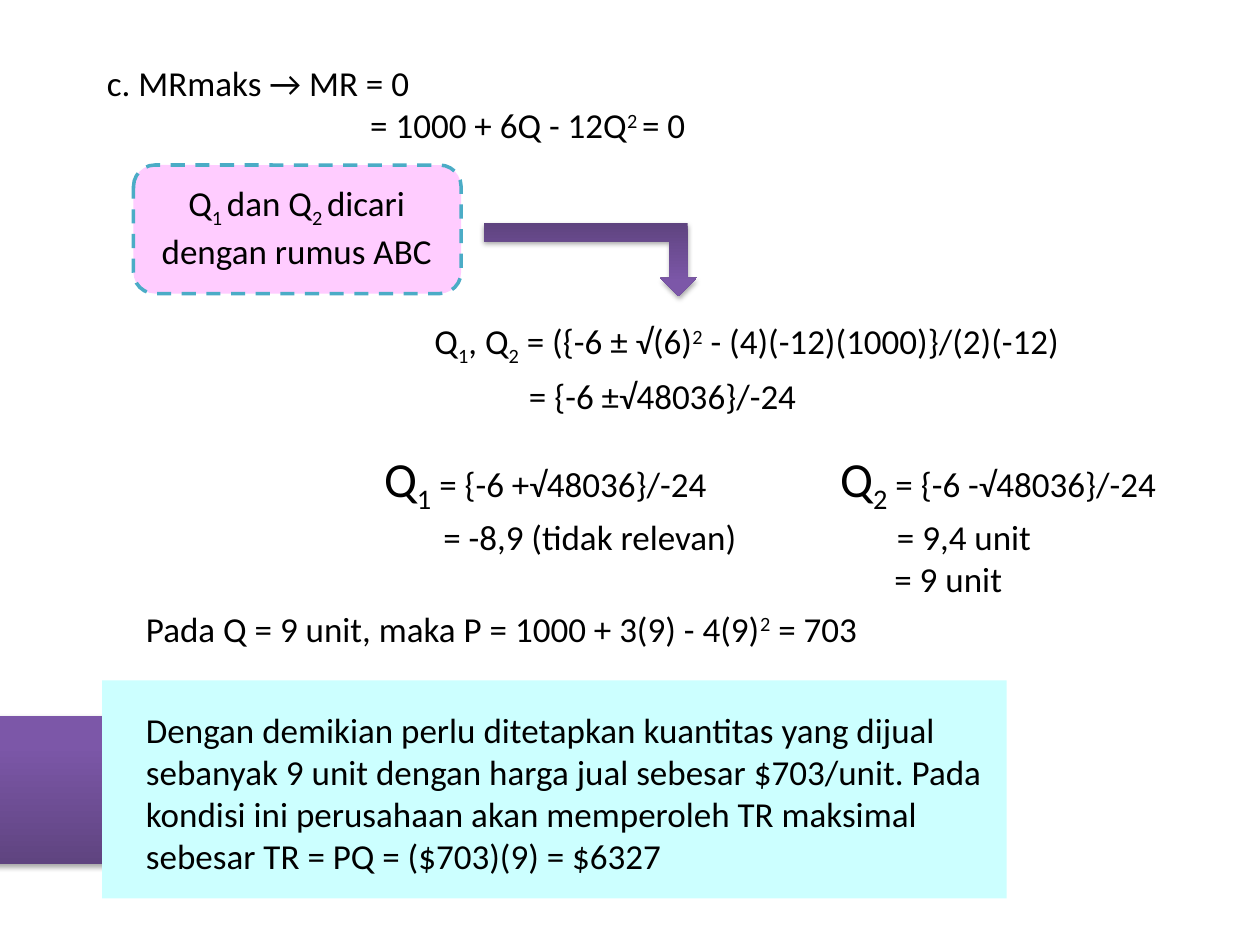
from dataclasses import dataclass

from lxml import etree
from pptx import Presentation
from pptx import util as u
from pptx.dml.color import RGBColor
from pptx.enum import dml, shapes, text
from pptx.oxml import ns

BLACK = RGBColor(0x00, 0x00, 0x00)
CYAN = RGBColor(0xCC, 0xFF, 0xFF)
PINK = RGBColor(0xFF, 0xCC, 0xFF)
TEAL = RGBColor(0x4B, 0xAC, 0xC6)
PURPLE_DARK = RGBColor(0x5F, 0x44, 0x80)
PURPLE_LIGHT = RGBColor(0x7C, 0x57, 0xA8)
SUB, SUPER = -25000, 30000


@dataclass
class Span:
    words: str
    baseline: int = 0
    size: int = 20


@dataclass
class Para:
    spans: list[Span]
    indent: float = 0
    before: float = 0
    centred: bool = False


@dataclass
class Note:
    place: tuple[float, float, float, float]
    paras: list[Para]
    wrap: bool = True


def inches(place):
    return [u.Inches(value) for value in place]


def add_panel(page, kind, place, colour=None):
    """Draw a borderless shape, with a flat colour or the purple gradient."""
    panel = page.shapes.add_shape(kind, *inches(place))
    panel.shadow.inherit = False
    panel.line.fill.background()
    if colour is not None:
        panel.fill.solid()
        panel.fill.fore_color.rgb = colour
        return panel
    panel.fill.gradient()
    panel.fill.gradient_angle = 90
    start, end = panel.fill.gradient_stops
    start.color.rgb, start.position = PURPLE_DARK, 0
    end.color.rgb, end.position = PURPLE_LIGHT, 0.8
    add_shadow(panel)
    return panel


def add_shadow(panel) -> None:
    effects = panel._element.spPr.find(ns.qn("a:effectLst"))
    shadow = etree.SubElement(
        effects, ns.qn("a:outerShdw"), blurRad=str(u.Pt(3.1)),
        dist=str(u.Pt(1.8)), dir="5400000", rotWithShape="0")
    colour = etree.SubElement(shadow, ns.qn("a:srgbClr"), val="000000")
    etree.SubElement(colour, ns.qn("a:alpha"), val="35000")


def add_note(page, note: Note) -> None:
    box = page.shapes.add_textbox(*inches(note.place))
    frame = box.text_frame
    frame.word_wrap = note.wrap
    for index, item in enumerate(note.paras):
        para = frame.add_paragraph() if index else frame.paragraphs[0]
        para.space_before = u.Pt(item.before)
        if item.centred:
            para.alignment = text.PP_ALIGN.CENTER
        if item.indent:
            para._p.get_or_add_pPr().set("marL", str(u.Inches(item.indent)))
        for span in item.spans:
            run = para.add_run()
            run.text = span.words
            run.font.name = "Calibri"
            run.font.size = u.Pt(span.size)
            run.font.color.rgb = BLACK
            if span.baseline:
                run.font._element.set("baseline", str(span.baseline))


def root_heading(number: str, formula: str) -> Para:
    return Para([Span("Q", size=28), Span(number, SUB, 28), Span(formula)])


NOTES = [
    # Conclusion
    Note((1.06, 5.57, 6.89, 1.49), [Para([Span(
        "Dengan demikian perlu ditetapkan kuantitas yang dijual sebanyak "
        "9 unit dengan harga jual sebesar $703/unit. Pada kondisi ini "
        "perusahaan akan memperoleh TR maksimal sebesar "
        "TR = PQ = ($703)(9) = $6327")], before=4)]),
    # Quadratic formula
    Note((3.35, 2.49, 5.56, 0.94), [
        Para([Span("Q"), Span("1", SUB), Span(", Q"), Span("2", SUB),
              Span(" = ({-6 ± √(6)"), Span("2", SUPER),
              Span(" - (4)(-12)(1000)}/(2)(-12)")], before=4),
        Para([Span("= {-6 ±√48036}/-24")], indent=0.75, before=4)]),
    # Starting condition
    Note((0.75, 0.44, 6.27, 0.77), [
        Para([Span("c. MRmaks → MR = 0")]),
        Para([Span("= 1000 + 6Q - 12Q"), Span("2 ", SUPER), Span("= 0")],
             indent=2.09)]),
    # Method
    Note((1.14, 1.39, 2.43, 0.77), [
        Para([Span("Q"), Span("1 ", SUB), Span("dan Q"), Span("2 ", SUB),
              Span("dicari dengan rumus ABC")], centred=True)]),
    # The two roots
    Note((2.95, 3.51, 3.07, 0.91), [
        root_heading("1", " = {-6 +√48036}/-24"),
        Para([Span("= -8,9 (tidak relevan)")], indent=0.47)]),
    Note((6.57, 3.51, 2.91, 1.25), [
        root_heading("2", " = {-6 -√48036}/-24"),
        Para([Span("= 9,4 unit")], indent=0.45),
        Para([Span("= 9 unit")], indent=0.43)]),
    # Price
    Note((1.06, 4.77, 5.96, 0.44), [
        Para([Span("Pada Q = 9 unit, maka P = 1000 + 3(9) - 4(9)"),
              Span("2", SUPER), Span(" = 703")])], wrap=False),
]


def main() -> None:
    deck = Presentation()
    deck.slide_width, deck.slide_height = u.Inches(10), u.Inches(7.5)
    page = deck.slides.add_slide(deck.slide_layouts[6])
    kinds = shapes.MSO_SHAPE

    # Panels behind the text
    add_panel(page, kinds.RECTANGLE, (-0.2, 5.68, 2.99, 1.18))
    add_panel(page, kinds.RECTANGLE, (0.81, 5.4, 7.18, 1.73), CYAN)
    method = add_panel(page, kinds.ROUNDED_RECTANGLE,
                       (1.06, 1.31, 2.6, 1.02), PINK)
    method.line.color.rgb = TEAL
    method.line.width = u.Pt(2)
    method.line.dash_style = dml.MSO_LINE.DASH

    for note in NOTES:
        add_note(page, note)

    # Arrow from the method down to the formula
    arrow = add_panel(page, kinds.BENT_UP_ARROW, (3.84, 1.77, 1.69, 0.58))
    arrow._element.spPr.xfrm.set("flipV", "1")

    deck.save("out.pptx")


if __name__ == "__main__":
    main()
